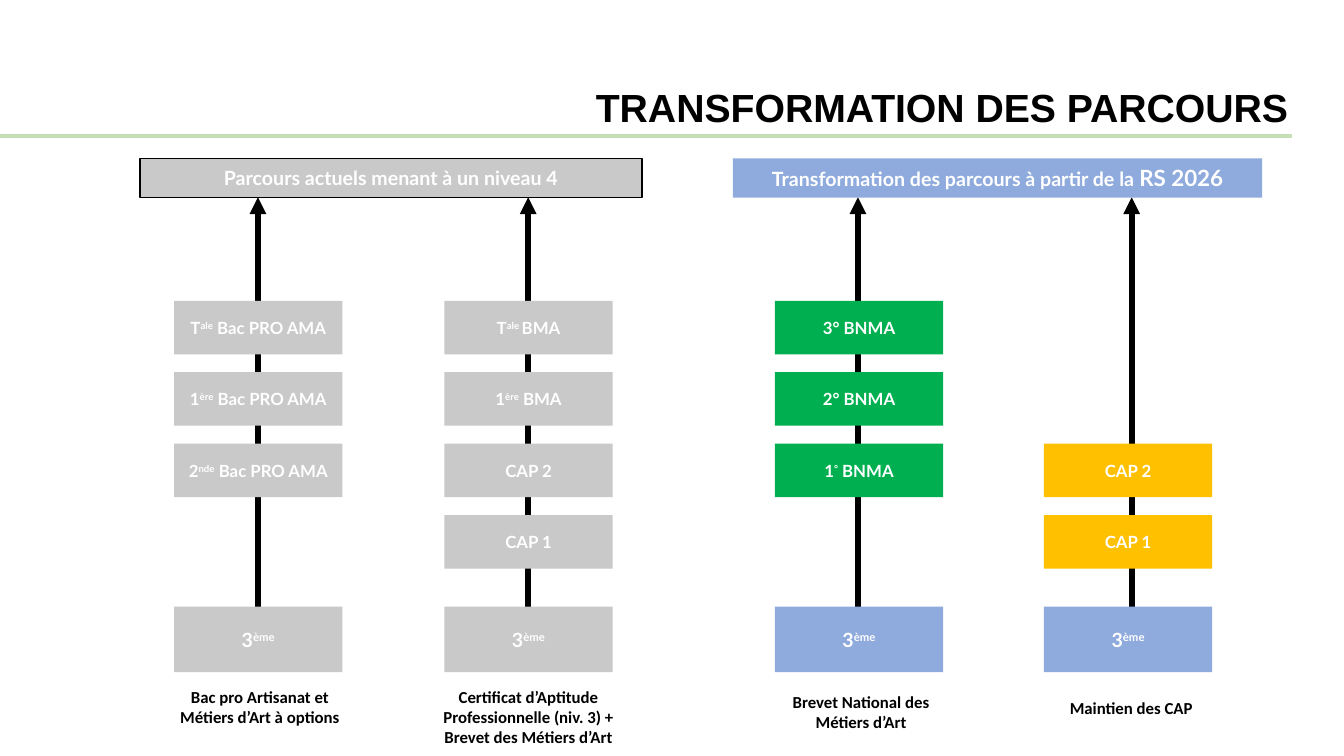
from lxml.etree import SubElement
from pptx import Presentation
from pptx.dml.color import RGBColor
from pptx.enum.shapes import MSO_CONNECTOR as Link, MSO_SHAPE as Form
from pptx.enum.text import MSO_ANCHOR as Anchor, PP_ALIGN as Align
from pptx.oxml.ns import qn
from pptx.util import Cm, Pt

GREY, BLUE, GREEN, GOLD = "C9C9C9", "8FAADC", "00B050", "FFC000"
WHITE, BLACK, PALE = "FFFFFF", "000000", "C5E0B4"
WIDE, HIGH = 4.24, 1.35
TOP, STEP = 7.58, 1.8
HEAD, BASE = 3.99, 15.29

HEADS = [
    (3.53, 12.65, GREY, BLACK, [("Parcours actuels menant à un niveau 4", 14)]),
    (18.47, 13.34, BLUE, None,
     [("Transformation des parcours à partir de la ", 14), ("RS 2026", 16)]),
]

PATHS = [
    (4.39, 6.5, GREY, GREY, 0,
     ["T^ale^ Bac PRO AMA", "1^ère^ Bac PRO AMA", "2^nde^ Bac PRO AMA"],
     ("Bac pro Artisanat et Métiers d’Art à options", 4.11, 17.17, 4.88, 1.27)),
    (11.2, 13.31, GREY, GREY, 0,
     ["T^ale ^BMA", "1^ère^ BMA", "CAP 2", "CAP 1"],
     ("Certificat d’Aptitude Professionnelle (niv. 3) + Brevet des Métiers d’Art",
      10.74, 17.17, 5.16, 1.8)),
    (19.53, 21.62, GREEN, BLUE, 0,
     ["3° BNMA", "2° BNMA", "1^°^ BNMA"],
     ("Brevet National des Métiers d’Art", 19.3, 17.3, 4.8, 1.27)),
    (26.31, 28.52, GOLD, BLUE, 2,
     ["CAP 2", "CAP 1"],
     ("Maintien des CAP", 26.39, 17.45, 4.24, 0.76)),
]


def tint(code):
    return RGBColor.from_string(code)


def write(para, text, size, face, color):
    for num, part in enumerate(text.split("^")):
        run = para.add_run()
        run.text = part
        font = run.font
        font.size, font.name, font.bold = Pt(size), face, True
        font.color.rgb = tint(color)
        if num % 2:
            run._r.get_or_add_rPr().set("baseline", "30000")


def add_box(slide, left, top, wide, high, fill, parts, edge=None):
    box = slide.shapes.add_shape(Form.RECTANGLE, Cm(left), Cm(top), Cm(wide), Cm(high))
    box.shadow.inherit = False
    box.fill.solid()
    box.fill.fore_color.rgb = tint(fill)
    if edge:
        box.line.color.rgb = tint(edge)
        box.line.width = Pt(1)
    else:
        box.line.fill.background()
    frame = box.text_frame
    frame.vertical_anchor = Anchor.MIDDLE
    para = frame.paragraphs[0]
    para.alignment = Align.CENTER
    for text, size in parts:
        write(para, text, size, "Lato", WHITE)


def add_text(slide, text, left, top, wide, high, size, face, align):
    frame = slide.shapes.add_textbox(Cm(left), Cm(top), Cm(wide), Cm(high)).text_frame
    frame.word_wrap = True
    para = frame.paragraphs[0]
    para.alignment = align
    write(para, text, size, face, BLACK)
    return frame


def add_line(slide, start, end, color, width, arrow=False):
    line = slide.shapes.add_connector(
        Link.STRAIGHT, Cm(start[0]), Cm(start[1]), Cm(end[0]), Cm(end[1]))
    line.line.color.rgb = tint(color)
    line.line.width = Pt(width)
    if arrow:
        SubElement(line.line._get_or_add_ln(), qn("a:tailEnd"), type="triangle")
    SubElement(line._element.spPr, qn("a:effectLst"))


def add_path(slide, left, axis, fill, root, first, steps, note):
    add_line(slide, (axis, 15.82), (axis, HEAD + 0.98), BLACK, 4, True)
    for row, step in enumerate(steps, first):
        add_box(slide, left, TOP + row * STEP, WIDE, HIGH, fill, [(step, 12)])
    add_box(slide, left, BASE, WIDE, 1.65, root, [("3^ème", 14)])
    add_text(slide, *note, 12, "Calibri", Align.CENTER)


def main():
    deck = Presentation()
    deck.slide_width, deck.slide_height = Cm(33.87), Cm(19.05)
    slide = deck.slides.add_slide(deck.slide_layouts[6])
    for path in PATHS:
        add_path(slide, *path)
    for left, wide, fill, edge, parts in HEADS:
        add_box(slide, left, HEAD, wide, 0.99, fill, parts, edge)
    add_line(slide, (32.56, 3.43), (0, 3.43), PALE, 2.5)
    title = add_text(slide, "TRANSFORMATION DES PARCOURS",
                     10.74, 1.35, 21.97, 2.08, 28, "Arial", Align.RIGHT)
    title.vertical_anchor = Anchor.BOTTOM
    title.paragraphs[0].line_spacing = 0.9
    deck.save("out.pptx")


if __name__ == "__main__":
    main()
